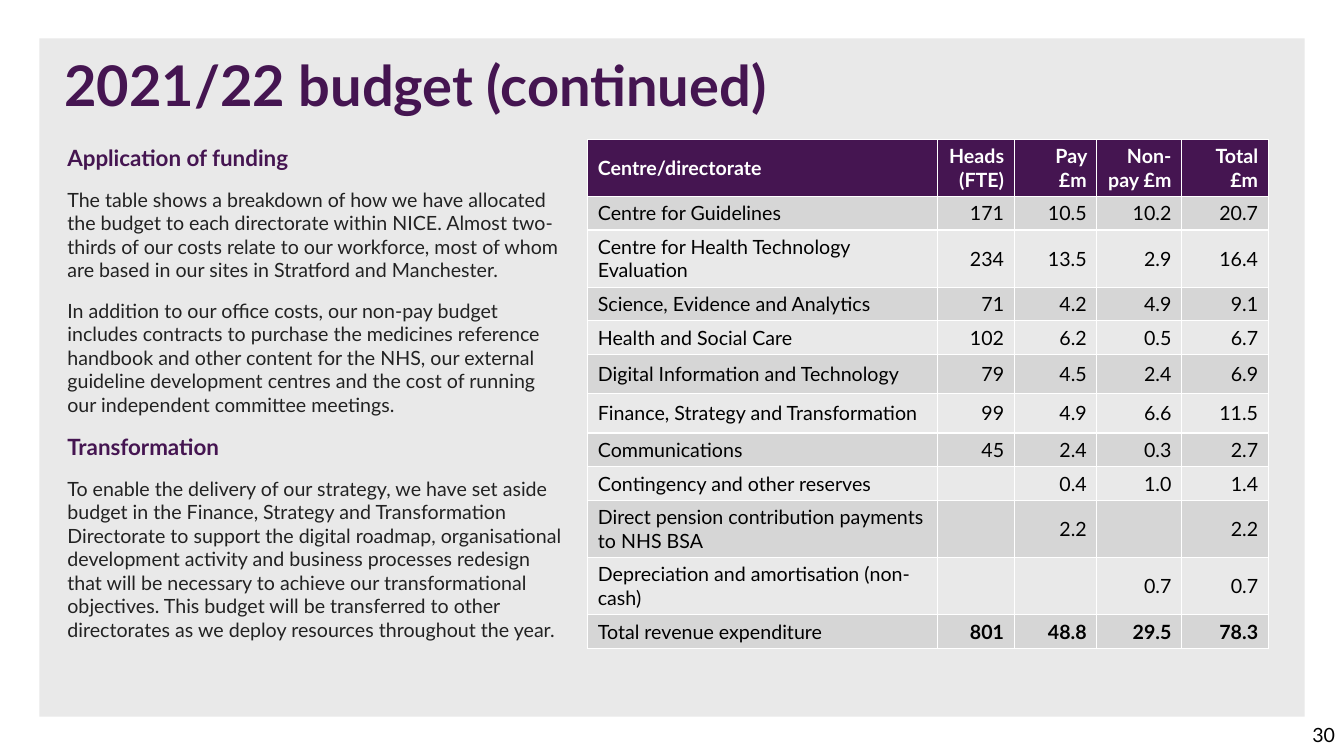
from dataclasses import dataclass

from lxml.etree import SubElement
from pptx import Presentation
from pptx.dml.color import RGBColor
from pptx.enum.shapes import MSO_SHAPE
from pptx.enum.text import MSO_ANCHOR, PP_ALIGN
from pptx.oxml.ns import qn
from pptx.util import Emu, Pt

PX = 9144  # 100 px to the inch
FONT = "Lato"
HEX = {
    "plum": "451551", "panel": "E9E9E9", "band": "D6D6D6",
    "body": "222222", "black": "000000", "white": "FFFFFF",
}


@dataclass
class Para:
    text: str
    size: int = 14
    color: str = "body"
    bold: bool = False


@dataclass
class Row:
    cells: tuple[str, ...]
    high: int = 30


def px(n: int) -> Emu:
    return Emu(n * PX)


def rgb(name: str) -> RGBColor:
    return RGBColor.from_string(HEX[name])


def put(para, text: str, *, size: int = 14, color: str = "black",
        bold: bool = False, right: bool = False) -> None:
    """Write formatted text in a paragraph; an empty one keeps its size."""
    para.alignment = PP_ALIGN.RIGHT if right else PP_ALIGN.LEFT
    if not text:
        SubElement(para._p, qn("a:endParaRPr"), sz=str(size * 100))
        return
    run = para.add_run()
    run.text = text
    font = run.font
    font.name, font.size, font.bold = FONT, Pt(size), bold
    font.color.rgb = rgb(color)


def add_box(slide, x: int, y: int, w: int, h: int):
    frame = slide.shapes.add_textbox(px(x), px(y), px(w), px(h)).text_frame
    frame.word_wrap = True
    return frame


def edge(cell) -> None:
    """Draw a white 1 pt line on all sides of a cell."""
    props = cell._tc.get_or_add_tcPr()
    for side in ("lnL", "lnR", "lnT", "lnB"):
        line = SubElement(props, qn(f"a:{side}"), w=str(Pt(1)))
        fill = SubElement(line, qn("a:solidFill"))
        SubElement(fill, qn("a:srgbClr"), val=HEX["white"])


def add_grid(slide, x: int, y: int, cols: list[int], rows: list[Row]) -> None:
    shape = slide.shapes.add_table(len(rows), len(cols), px(x), px(y),
                                   px(sum(cols)), px(sum(r.high for r in rows)))
    table = shape.table
    table.first_row = True
    table.horz_banding = False
    for col, wide in zip(table.columns, cols):
        col.width = px(wide)
    for i, row in enumerate(rows):
        table.rows[i].height = px(row.high)
        head, last = i == 0, i == len(rows) - 1
        fill = "plum" if head else "band" if i % 2 else "panel"
        for j, text in enumerate(row.cells):
            cell = table.cell(i, j)
            cell.vertical_anchor = MSO_ANCHOR.MIDDLE
            edge(cell)
            cell.fill.solid()
            cell.fill.fore_color.rgb = rgb(fill)
            put(cell.text_frame.paragraphs[0], text, right=j > 0,
                color="white" if head else "black",
                bold=head or (last and j > 0))


STORY = [
    Para("Application of funding", 16, "plum", True),
    Para("The table shows a breakdown of how we have allocated the budget to "
         "each directorate within NICE. Almost two-thirds of our costs relate "
         "to our workforce, most of whom are based in our sites in Stratford "
         "and Manchester."),
    Para("In addition to our office costs, our non-pay budget "
         "includes contracts to purchase the medicines reference "
         "handbook and other content for the NHS, our external guideline "
         "development centres and the cost of running our independent "
         "committee meetings."),
    Para("Transformation", 16, "plum", True),
    Para("To enable the delivery of our strategy, we have set aside budget in "
         "the Finance, Strategy and Transformation Directorate to support the "
         "digital roadmap, organisational development activity and business "
         "processes redesign that will be necessary to achieve our "
         "transformational objectives. This budget will be transferred to "
         "other directorates as we deploy resources throughout the year."),
]

COLS = [347, 76, 82, 84, 86]
COSTS = [
    Row(("Centre/directorate", "Heads (FTE)", "Pay £m", "Non-pay £m", "Total £m"), 50),
    Row(("Centre for Guidelines", "171", "10.5", "10.2", "20.7")),
    Row(("Centre for Health Technology Evaluation", "234", "13.5", "2.9", "16.4"), 50),
    Row(("Science, Evidence and Analytics", "71", "4.2", "4.9", "9.1")),
    Row(("Health and Social Care", "102", "6.2", "0.5", "6.7")),
    Row(("Digital Information and Technology", "79", "4.5", "2.4", "6.9"), 39),
    Row(("Finance, Strategy and Transformation", "99", "4.9", "6.6", "11.5"), 39),
    Row(("Communications", "45", "2.4", "0.3", "2.7")),
    Row(("Contingency and other reserves", "", "0.4", "1.0", "1.4")),
    Row(("Direct pension contribution payments to NHS BSA", "", "2.2", "", "2.2"), 50),
    Row(("Depreciation and amortisation (non-cash)", "", "", "0.7", "0.7"), 50),
    Row(("Total revenue expenditure", "801", "48.8", "29.5", "78.3")),
]


def main() -> None:
    deck = Presentation()
    deck.slide_width, deck.slide_height = px(1333), px(750)
    slide = deck.slides.add_slide(deck.slide_layouts[6])

    # Grey panel
    panel = slide.shapes.add_shape(MSO_SHAPE.RECTANGLE, px(39), px(38),
                                   px(1255), px(673))
    panel.shadow.inherit = False
    panel.fill.solid()
    panel.fill.fore_color.rgb = rgb("panel")
    panel.line.fill.background()

    # Title
    title = add_box(slide, 54, 53, 1217, 140).paragraphs[0]
    title.line_spacing = 0.9
    put(title, "2021/22 budget (continued)", size=40, color="plum", bold=True)

    # Story on the left
    story = add_box(slide, 57, 138, 513, 443)
    for i, item in enumerate(STORY):
        para = story.add_paragraph() if i else story.paragraphs[0]
        if i:
            para.space_before = Pt(12)
        put(para, item.text, size=item.size, color=item.color, bold=item.bold)

    # Budget table
    add_grid(slide, 583, 138, COLS, COSTS)

    # Page number
    page = add_box(slide, 1034, 709, 300, 40)
    page.vertical_anchor = MSO_ANCHOR.MIDDLE
    put(page.paragraphs[0], "30", right=True)

    deck.save("out.pptx")


if __name__ == "__main__":
    main()
